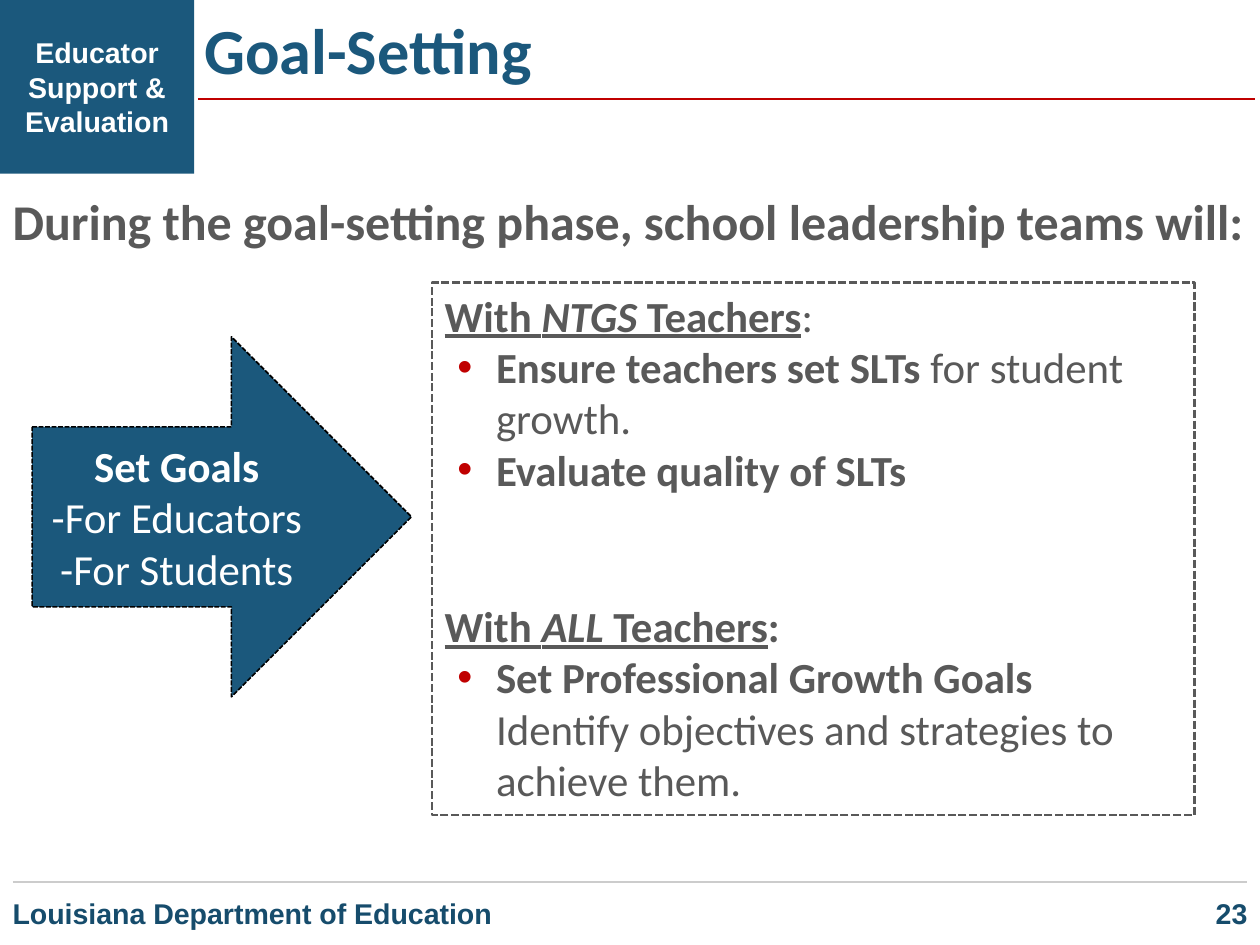
from lxml import etree
from pptx import Presentation
from pptx.dml.color import RGBColor
from pptx.enum.dml import MSO_LINE_DASH_STYLE as Dash
from pptx.enum.shapes import MSO_CONNECTOR as Connector, MSO_SHAPE as Shape
from pptx.enum.text import MSO_ANCHOR as Anchor, PP_ALIGN as Align
from pptx.oxml.ns import qn
from pptx.util import Pt

PX = 9144
WIDTH, HEIGHT = 980, 735
BLUE = RGBColor(0x1B, 0x58, 0x7C)
NAVY = RGBColor(0x16, 0x4C, 0x6C)
RED = RGBColor(0xC0, 0x00, 0x00)
GRAY = RGBColor(0x59, 0x59, 0x59)
SILVER = RGBColor(0xCC, 0xCC, 0xCC)
BLACK = RGBColor(0x00, 0x00, 0x00)
WHITE = RGBColor(0xFF, 0xFF, 0xFF)


def emu(*lengths):
    """Turn px lengths into EMU."""
    return [length * PX for length in lengths]


def set_indent(paragraph, left, bullet):
    """Indent a paragraph and hang a red bullet in front of it if asked."""
    properties = paragraph._p.get_or_add_pPr()
    properties.set("marL", str(left * PX))
    properties.set("indent", str(-30 * PX if bullet else 0))
    if bullet:
        color = etree.SubElement(properties, qn("a:buClr"))
        etree.SubElement(color, qn("a:srgbClr"), val=str(RED))
        etree.SubElement(properties, qn("a:buFont"), typeface="Arial")
        etree.SubElement(properties, qn("a:buChar"), char="•")


def write_text(frame, paragraphs, size, color, font="Calibri",
               align=Align.LEFT, anchor=Anchor.TOP, wrap=True):
    """Fill a frame with paragraphs of (text, style letters) runs."""
    frame.word_wrap = wrap
    frame.vertical_anchor = anchor
    for index, (runs, layout) in enumerate(paragraphs):
        paragraph = frame.paragraphs[0] if index == 0 else frame.add_paragraph()
        paragraph.alignment = align
        if "before" in layout:
            paragraph.space_before = Pt(layout["before"])
        if "left" in layout:
            set_indent(paragraph, layout["left"], layout.get("bullet", False))
        for text, style in runs:
            run = paragraph.add_run()
            run.text = text
            run.font.name = font
            run.font.size = Pt(size)
            run.font.color.rgb = color
            run.font.bold = "b" in style
            run.font.italic = "i" in style
            run.font.underline = "u" in style


def add_label(slide, box, text, size, color, **text_format):
    """Place one bold line of text in a box."""
    label = slide.shapes.add_textbox(*emu(*box))
    write_text(label.text_frame, [([(text, "b")], {})], size, color, **text_format)


def add_panel(slide, kind, box, fill=None, line=None, line_width=1):
    """Place a flat shape with an optional fill and dashed outline."""
    panel = slide.shapes.add_shape(kind, *emu(*box))
    panel.shadow.inherit = False
    if fill is None:
        panel.fill.background()
    else:
        panel.fill.solid()
        panel.fill.fore_color.rgb = fill
    if line is None:
        panel.line.fill.background()
    else:
        panel.line.color.rgb = line
        panel.line.width = Pt(line_width)
        panel.line.dash_style = Dash.SQUARE_DOT
    return panel


def add_rule(slide, left, right, y, color, width):
    """Draw a horizontal rule without a shadow."""
    rule = slide.shapes.add_connector(Connector.STRAIGHT, *emu(left, y, right, y))
    rule.line.color.rgb = color
    rule.line.width = Pt(width)
    etree.SubElement(rule._element.spPr, qn("a:effectLst"))


def add_header(slide, box):
    """Build the program tag, the title and its red rule."""
    left, top, width, height = box
    tag_width = 151
    tag = add_panel(slide, Shape.RECTANGLE, (left, top, tag_width, height), BLUE)
    write_text(tag.text_frame, [([("Educator Support & Evaluation", "b")], {})],
               16, WHITE, font="Arial", align=Align.CENTER, anchor=Anchor.MIDDLE)
    add_label(slide, (left + tag_width - 2, top + 3, width - tag_width + 2, 94),
              "Goal-Setting", 36, BLUE)
    add_rule(slide, left + tag_width + 3, left + width - 4, top + 77, RED, 1.5)


def add_goal_arrow(slide, box):
    """Build the arrow that names the phase."""
    arrow = add_panel(slide, Shape.RIGHT_ARROW, box, BLUE, BLACK, 0.9)
    lines = [("Set Goals", "b"), ("-For Educators", ""), ("-For Students", "")]
    write_text(arrow.text_frame, [([line], {}) for line in lines], 24, WHITE,
               align=Align.CENTER, anchor=Anchor.MIDDLE)


def add_duties(slide, box):
    """Build the dashed panel that lists duties by teacher group."""
    bullet = {"left": 40, "bullet": True}
    duties = [
        ([("With ", "bu"), ("NTGS", "biu"), (" Teachers", "bu"), (":", "")], {}),
        ([("Ensure teachers set SLTs ", "b"), ("for student growth.", "")], bullet),
        ([("Evaluate quality of SLTs", "b")], bullet),
        ([("With ", "bu"), ("ALL", "biu"), (" Teachers", "bu"), (":", "b")],
         {"before": 58.6}),
        ([("Set Professional Growth Goals", "b")], bullet),
        ([("Identify objectives and strategies to achieve them.", "")], {"left": 40}),
    ]
    panel = add_panel(slide, Shape.RECTANGLE, box, line=GRAY, line_width=1.5)
    write_text(panel.text_frame, duties, 24, GRAY)


def add_footer(slide, box):
    """Build the footer rule, the department and the page number."""
    left, top, width, height = box
    number_width = 274
    footer_format = {"font": "Arial", "anchor": Anchor.MIDDLE}
    add_rule(slide, left + 10, left + width - 10, top, SILVER, 0.75)
    add_label(slide, (left, top, 476, height), "Louisiana Department of Education",
              16, NAVY, **footer_format)
    add_label(slide, (left + width - number_width, top, number_width, height), "23",
              16, NAVY, align=Align.RIGHT, **footer_format)


def main():
    """Build the goal-setting slide and save it."""
    presentation = Presentation()
    presentation.slide_width, presentation.slide_height = emu(WIDTH, HEIGHT)
    slide = presentation.slides.add_slide(presentation.slide_layouts[6])
    add_header(slide, (0, 0, WIDTH, 135))
    add_label(slide, (0, 143, WIDTH, 57),
              "During the goal-setting phase, school leadership teams will:",
              28, GRAY, wrap=False)
    add_goal_arrow(slide, (25, 262, 295, 280))
    add_duties(slide, (336, 220, 593, 414))
    add_footer(slide, (0, 686, WIDTH, 49))
    presentation.save("out.pptx")


if __name__ == "__main__":
    main()
